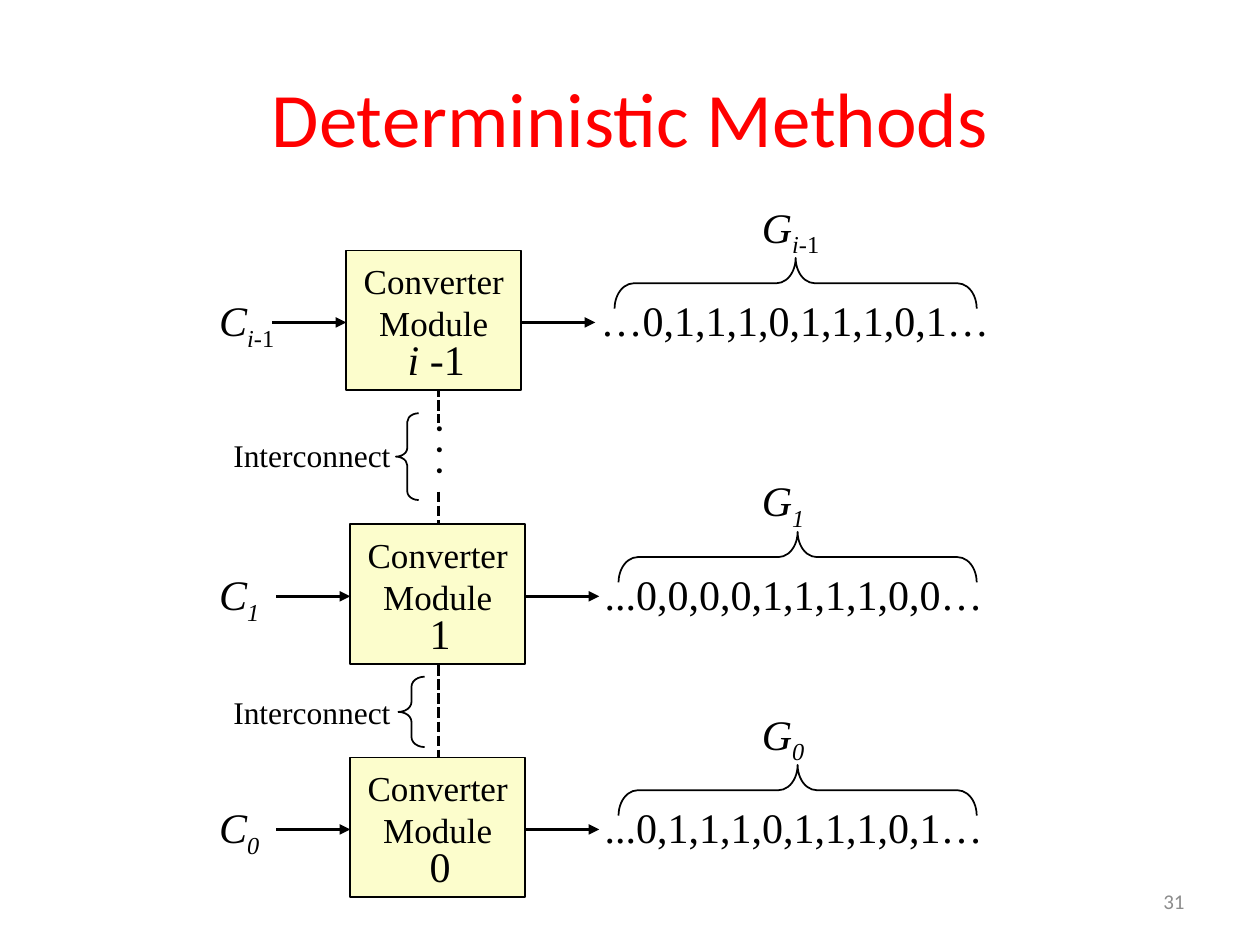
from lxml.etree import SubElement
from pptx import Presentation
from pptx.dml.color import RGBColor as RGB
from pptx.enum.dml import MSO_LINE_DASH_STYLE as Dash
from pptx.enum.shapes import MSO_CONNECTOR as Connector, MSO_SHAPE as Shape
from pptx.enum.text import MSO_ANCHOR as Anchor, PP_ALIGN as Align
from pptx.oxml.ns import qn
from pptx.util import Cm, Pt

THEME = dict(
    title_font="Calibri", body_font="Times New Roman",
    red=RGB(255, 0, 0), ink=RGB(0, 0, 0), gray=RGB(0x8C, 0x8C, 0x8C),
    module=RGB(0xFC, 0xFD, 0xCC),
    title=44, symbol=24, name=20, note=18, number=12,
    outline=1, arrow=2,
)

TITLE = "Deterministic Methods"
PAGE_NUMBER = "31"
MODULE_NAME = ["Converter", "Module"]
MODULES = [
    dict(left=7.06, top=15.27, label=[("0", "")], label_dx=1.35,
         subscript=[("0", "i_")], sequence="...0,1,1,1,0,1,1,1,0,1…"),
    dict(left=7.06, top=10.57, label=[("1", "")], label_dx=1.35,
         subscript=[("1", "i_")], sequence="...0,0,0,0,1,1,1,1,0,0…"),
    dict(left=6.98, top=5.05, label=[("i ", "i"), ("-1", "")], label_dx=0.99,
         subscript=[("i", "i_"), ("-1", "_")], sequence="…0,1,1,1,0,1,1,1,0,1…"),
]
LINKS = [(6.65, 8.53), (9.91, 11.76), (13.41, 15.27)]
INTERCONNECTS = [
    dict(label_top=13.84, brace=(8.03, 13.64, 0.53, 1.42)),
    dict(label_top=8.66, brace=(7.98, 8.33, 0.46, 1.75)),
]

MODULE_W, MODULE_H = 3.53, 2.82
ARROW_LENGTH, ARROW_DY = 1.49, 1.45
LINE_H = 1.27
INPUT_X, OUTPUT_X, LINK_X = 4.17, 15.11, 8.84
SEQUENCE_DX, BRACE_DX, BRACE_RIGHT, BRACE_H = 4.88, 5.41, 19.69, 1.02


def write(frame, paragraphs, size="symbol", font="body_font", color="ink",
          align=Align.LEFT, anchor=Anchor.TOP):
    frame.word_wrap = True
    frame.vertical_anchor = anchor
    for index, runs in enumerate(paragraphs):
        paragraph = frame.paragraphs[0] if index == 0 else frame.add_paragraph()
        paragraph.alignment = align
        for text, style in [(runs, "")] if isinstance(runs, str) else runs:
            run = paragraph.add_run()
            run.text = text
            run.font.size = Pt(THEME[size])
            run.font.name = THEME[font]
            run.font.color.rgb = THEME[color]
            run.font.italic = "i" in style
            if "_" in style:
                run.font._element.set("baseline", "-25000")


def add_text(slide, place, paragraphs, rotation=0, **text_format):
    box = slide.shapes.add_textbox(*map(Cm, place))
    box.rotation = rotation
    write(box.text_frame, paragraphs, **text_format)


def add_outline(slide, preset, place, fill=None, rotation=0):
    shape = slide.shapes.add_shape(preset, *map(Cm, place))
    shape.shadow.inherit = False
    shape.rotation = rotation
    if fill is None:
        shape.fill.background()
    else:
        shape.fill.solid()
        shape.fill.fore_color.rgb = fill
    shape.line.color.rgb = THEME["ink"]
    shape.line.width = Pt(THEME["outline"])
    return shape


def add_brace(slide, place, rotation):
    brace = add_outline(slide, Shape.RIGHT_BRACE, place, rotation=rotation)
    brace.adjustments[0] = 0.38
    brace.adjustments[1] = 0.5


def add_line(slide, start, end, dashed=False):
    line = slide.shapes.add_connector(Connector.STRAIGHT, *map(Cm, start + end))
    line.line.color.rgb = THEME["ink"]
    line.line.width = Pt(THEME["arrow"])
    if dashed:
        line.line.dash_style = Dash.SQUARE_DOT
    else:
        SubElement(line.line._get_or_add_ln(), qn("a:tailEnd"), type="triangle")
    SubElement(line._element.spPr, qn("a:effectLst"))


def add_module(slide, left, top, label, label_dx, subscript, sequence):
    right, arrow_y = left + MODULE_W, top + ARROW_DY
    add_outline(slide, Shape.RECTANGLE, (left, top, MODULE_W, MODULE_H),
                fill=THEME["module"])
    add_text(slide, (left, top + 0.06, MODULE_W, 1.96), MODULE_NAME,
             size="name", align=Align.CENTER)
    add_text(slide, (left + label_dx, top + 1.55, 2.44, LINE_H), [label])
    add_line(slide, (right, arrow_y), (right + ARROW_LENGTH, arrow_y))
    add_line(slide, (left - ARROW_LENGTH, arrow_y), (left, arrow_y))
    add_text(slide, (INPUT_X, top + 0.77, 1.85, LINE_H), [[("C", "i")] + subscript])
    add_text(slide, (OUTPUT_X, top - 1.12, 2.13, LINE_H), [[("G", "i")] + subscript])
    add_text(slide, (left + SEQUENCE_DX, top + 0.77, 9.86, LINE_H), [sequence])

    brace_left = left + BRACE_DX
    span = BRACE_RIGHT - brace_left
    center_x = brace_left + span / 2
    center_y = top + 0.15 + BRACE_H / 2
    add_brace(slide, (center_x - BRACE_H / 2, center_y - span / 2, BRACE_H, span), 270)


def main():
    deck = Presentation()
    deck.slide_width, deck.slide_height = Cm(25.4), Cm(19.05)
    slide = deck.slides.add_slide(deck.slide_layouts[5])

    title = slide.shapes.title
    title.left, title.top, title.width, title.height = map(Cm, (1.27, 0.76, 22.86, 3.18))
    write(title.text_frame, [TITLE], size="title", font="title_font", color="red",
          align=Align.CENTER, anchor=Anchor.MIDDLE)

    for top, bottom in LINKS:
        add_line(slide, (LINK_X, top), (LINK_X, bottom), dashed=True)
    for module in MODULES:
        add_module(slide, **module)
    for interconnect in INTERCONNECTS:
        add_text(slide, (INPUT_X, interconnect["label_top"], 4.24, 1.02),
                 ["Interconnect"], size="note", align=Align.CENTER)
        add_brace(slide, interconnect["brace"], 180)
    add_text(slide, (7.01, 7.67, 3.1, LINE_H), [". . ."], rotation=270)
    add_text(slide, (18.21, 17.65, 5.92, 1.02), [PAGE_NUMBER], size="number",
             font="title_font", color="gray", align=Align.RIGHT, anchor=Anchor.MIDDLE)

    deck.save("out.pptx")


if __name__ == "__main__":
    main()
